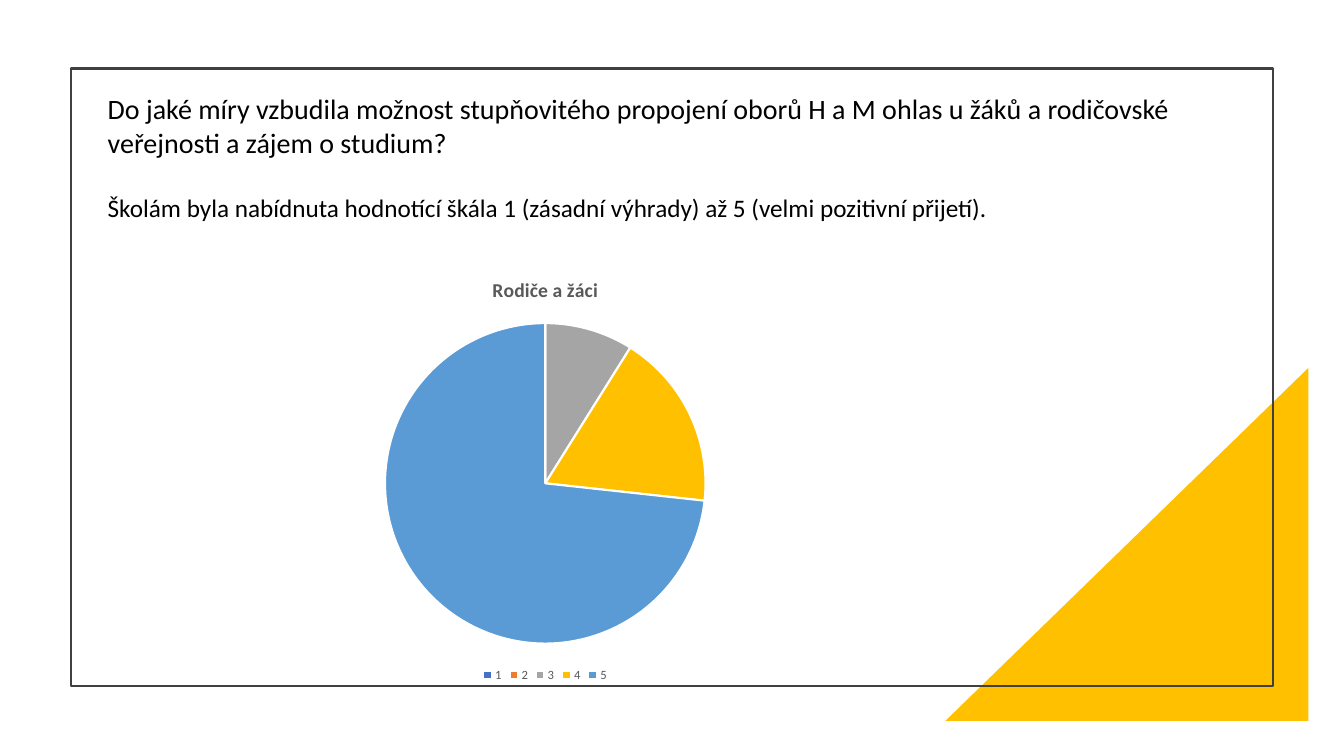
from dataclasses import dataclass
from typing import Optional

import pptx
import pptx.chart.data
import pptx.dml.color
import pptx.enum.chart
import pptx.enum.shapes
import pptx.enum.text
import pptx.oxml
import pptx.util
from pptx.oxml.ns import nsdecls

RGBColor = pptx.dml.color.RGBColor
BLACK = RGBColor(0x00, 0x00, 0x00)
WHITE = RGBColor(0xFF, 0xFF, 0xFF)
FRAME_GREY = RGBColor(0x40, 0x40, 0x40)
LABEL_GREY = RGBColor(0x59, 0x59, 0x59)
BLUE = RGBColor(0x44, 0x72, 0xC4)
ORANGE = RGBColor(0xED, 0x7D, 0x31)
GREY = RGBColor(0xA5, 0xA5, 0xA5)
GOLD = RGBColor(0xFF, 0xC0, 0x00)
LIGHT_BLUE = RGBColor(0x5B, 0x9B, 0xD5)

FONT = "Calibri"
SLIDE_W = pptx.util.Inches(13.333)
SLIDE_H = pptx.util.Inches(7.5)


@dataclass(frozen=True)
class Box:
    """A rectangle in percent of the slide's width and height."""
    left: float
    top: float
    width: float
    height: float

    def emu(self) -> tuple[int, int, int, int]:
        return (int(SLIDE_W * self.left / 100), int(SLIDE_H * self.top / 100),
                int(SLIDE_W * self.width / 100), int(SLIDE_H * self.height / 100))


@dataclass(frozen=True)
class Decoration:
    preset: pptx.enum.shapes.MSO_SHAPE
    box: Box
    fill: Optional[RGBColor] = None
    line: Optional[RGBColor] = None
    flipped: bool = False


@dataclass(frozen=True)
class Paragraph:
    text: str
    size: int
    space_before: int = 0


@dataclass(frozen=True)
class Rating:
    label: str
    value: int
    color: RGBColor


DECORATIONS = [
    Decoration(pptx.enum.shapes.MSO_SHAPE.RIGHT_TRIANGLE,
               Box(70.35, 48.67, 27, 46.67), fill=GOLD, flipped=True),
    Decoration(pptx.enum.shapes.MSO_SHAPE.RECTANGLE,
               Box(5.25, 9.07, 89.48, 81.73), line=FRAME_GREY),
]
CHART_BOX = Box(17.55, 34.27, 46.05, 56.53)
TEXT_BOX = Box(7.28, 11.47, 85.43, 22.93)
RATINGS = [
    Rating("1", 0, BLUE),
    Rating("2", 0, ORANGE),
    Rating("3", 9, GREY),
    Rating("4", 18, GOLD),
    Rating("5", 74, LIGHT_BLUE),
]
PARAGRAPHS = [
    Paragraph("Do jaké míry vzbudila možnost stupňovitého propojení oborů H a M "
              "ohlas u žáků a rodičovské veřejnosti a zájem o studium?", 20),
    Paragraph("Školám byla nabídnuta hodnotící škála 1 (zásadní výhrady) "
              "až 5 (velmi pozitivní přijetí).", 18, space_before=24),
]
PIE_LAYOUT = (
    f'<c:layout {nsdecls("c")}><c:manualLayout>'
    '<c:layoutTarget val="inner"/><c:xMode val="edge"/><c:yMode val="edge"/>'
    '<c:x val="0.24"/><c:y val="0.15"/><c:w val="0.52"/><c:h val="0.75"/>'
    '</c:manualLayout></c:layout>'
)


def style_font(font, size: int, color: RGBColor, bold: bool = False) -> None:
    font.name = FONT
    font.size = pptx.util.Pt(size)
    font.bold = bold
    font.color.rgb = color


def add_decoration(s, item: Decoration) -> None:
    sp = s.shapes.add_shape(item.preset, *item.box.emu())
    sp.shadow.inherit = False
    if item.fill is None:
        sp.fill.background()
    else:
        sp.fill.solid()
        sp.fill.fore_color.rgb = item.fill
    if item.line is None:
        sp.line.fill.background()
    else:
        sp.line.color.rgb = item.line
        sp.line.width = pptx.util.Pt(1.5)
    if item.flipped:
        sp.element.spPr.get_or_add_xfrm().set("flipH", "1")


def add_rating_pie(s, box: Box, title: str, ratings: list[Rating]) -> None:
    data = pptx.chart.data.CategoryChartData()
    data.categories = [rating.label for rating in ratings]
    data.add_series(title, [rating.value for rating in ratings])
    chart = s.shapes.add_chart(pptx.enum.chart.XL_CHART_TYPE.PIE, *box.emu(), data).chart
    style_font(chart.font, 10, BLACK)

    chart.has_title = True
    tf = chart.chart_title.text_frame
    tf.text = title
    style_font(tf.paragraphs[0].runs[0].font, 14, LABEL_GREY, bold=True)

    chart.has_legend = True
    chart.legend.position = pptx.enum.chart.XL_LEGEND_POSITION.BOTTOM
    chart.legend.include_in_layout = False
    style_font(chart.legend.font, 9, LABEL_GREY)

    plot = chart.plots[0]
    plot.vary_by_categories = True
    for index, rating in enumerate(ratings):
        point = plot.series[0].points[index]
        point.format.fill.solid()
        point.format.fill.fore_color.rgb = rating.color
        point.format.line.color.rgb = WHITE
        point.format.line.width = pptx.util.Pt(1.5)

    plot_area = chart.element.chart.plotArea
    for layout in plot_area.xpath("c:layout"):
        plot_area.remove(layout)
    plot_area.insert(0, pptx.oxml.parse_xml(PIE_LAYOUT))


def add_text(s, box: Box, paragraphs: list[Paragraph]) -> None:
    tf = s.shapes.add_textbox(*box.emu()).text_frame
    tf.word_wrap = True
    tf.auto_size = pptx.enum.text.MSO_AUTO_SIZE.SHAPE_TO_FIT_TEXT
    tf.text = "\n".join(item.text for item in paragraphs)
    for p, item in zip(tf.paragraphs, paragraphs):
        p.space_before = pptx.util.Pt(item.space_before)
        for r in p.runs:
            style_font(r.font, item.size, BLACK)


def main() -> None:
    prs = pptx.Presentation()
    prs.slide_width, prs.slide_height = SLIDE_W, SLIDE_H
    s = prs.slides.add_slide(prs.slide_layouts[6])
    for item in DECORATIONS:
        add_decoration(s, item)
    add_rating_pie(s, CHART_BOX, "Rodiče a žáci", RATINGS)
    add_text(s, TEXT_BOX, PARAGRAPHS)
    prs.save("out.pptx")


if __name__ == "__main__":
    main()
